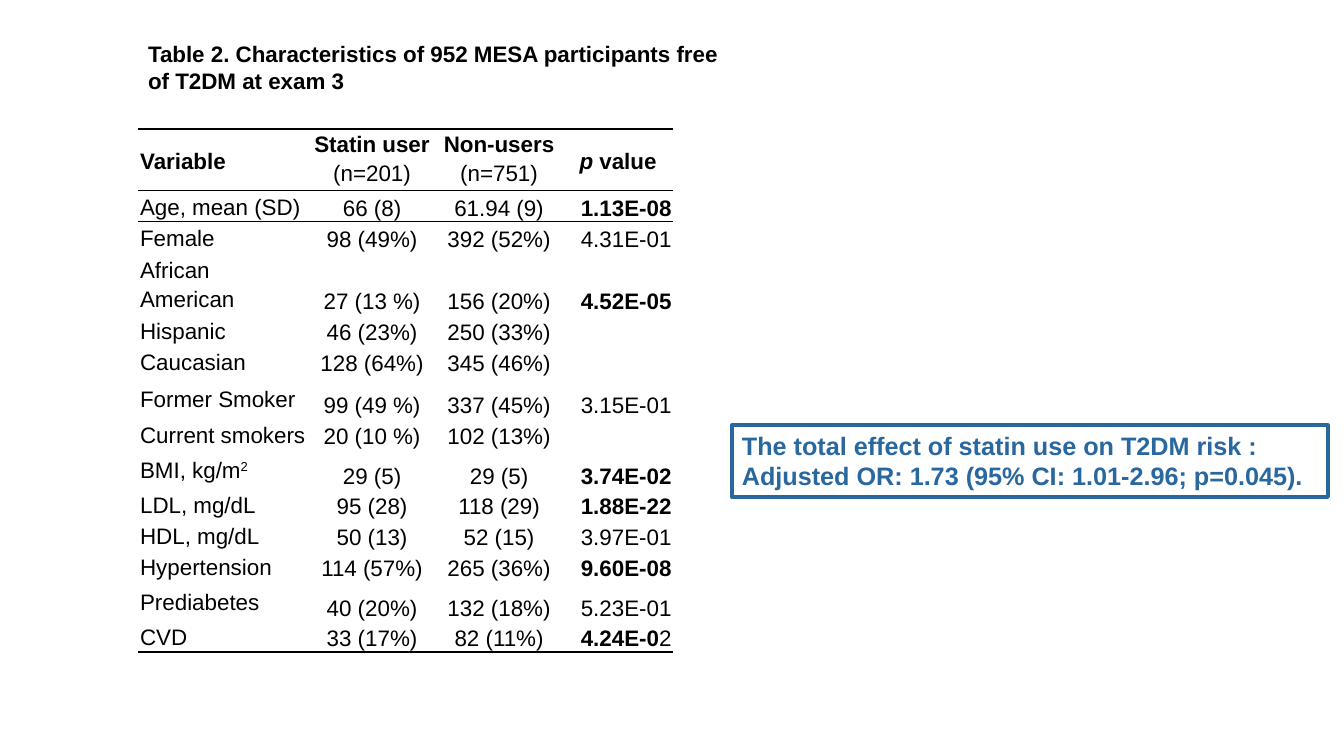
import pptx
import pptx.dml.color
import pptx.enum.shapes
import pptx.enum.text
import pptx.oxml.ns
import pptx.oxml.xmlchemy
import pptx.util

Inches = pptx.util.Inches
ALIGN = pptx.enum.text.PP_ALIGN
ANCHOR = pptx.enum.text.MSO_ANCHOR
COLORS = {"ink": "000000", "accent": "29679F"}
COLUMN_WIDTHS = [1.69, 1.26, 1.26, 1.1]
COLUMN_ALIGN = [ALIGN.LEFT, ALIGN.CENTER, ALIGN.CENTER, ALIGN.RIGHT]
PLAIN_STYLE = "{2D5ABB26-0587-4C30-8999-92F81FD0307C}"

HEADER = [
    [[("Variable", "b")]],
    [[("Statin user", "b")], [("(n=201)", "")]],
    [[("Non-users", "b")], [("(n=751)", "")]],
    [[("p ", "bi"), ("value", "b")]],
]
CHARACTERISTICS = [
    (0.3, "Age, mean (SD)", "66 (8)", "61.94 (9)", [("1.13E-08", "b")]),
    (0.3, "Female", "98 (49%)", "392 (52%)", "4.31E-01"),
    (0.6, "African American", "27 (13 %)", "156 (20%)", [("4.52E-05", "b")]),
    (0.3, "Hispanic", "46 (23%)", "250 (33%)", ""),
    (0.3, "Caucasian", "128 (64%)", "345 (46%)", ""),
    (0.42, "Former Smoker", "99 (49 %)", "337 (45%)", "3.15E-01"),
    (0.3, "Current smokers", "20 (10 %)", "102 (13%)", ""),
    (0.39, [("BMI, kg/m", ""), ("2", "^")], "29 (5)", "29 (5)", [("3.74E-02", "b")]),
    (0.3, "LDL, mg/dL", "95 (28)", "118 (29)", [("1.88E-22", "b")]),
    (0.3, "HDL, mg/dL", "50 (13)", "52 (15)", "3.97E-01"),
    (0.3, "Hypertension", "114 (57%)", "265 (36%)", [("9.60E-08", "b")]),
    (0.39, "Prediabetes", "40 (20%)", "132 (18%)", "5.23E-01"),
    (0.29, "CVD", "33 (17%)", "82 (11%)", [("4.24E-0", "b"), ("2", "")]),
]


class SlideBuilder:
    """Draws styled elements on the current slide."""

    font = "Arial"

    def __init__(self, slide):
        self.slide = slide

    def add_text(self, frame, paragraphs, size, color, align=ALIGN.LEFT, spacing=None):
        for index, parts in enumerate(paragraphs):
            paragraph = frame.paragraphs[0] if index == 0 else frame.add_paragraph()
            paragraph.alignment = align
            paragraph.line_spacing = spacing
            for text, marks in parts:
                if not text:
                    end = pptx.oxml.xmlchemy.OxmlElement("a:endParaRPr")
                    end.set("sz", str(size * 100))
                    paragraph._p.append(end)
                    continue
                run = paragraph.add_run()
                run.text = text
                run.font.name = self.font
                run.font.size = pptx.util.Pt(size)
                run.font.bold = "b" in marks
                run.font.italic = "i" in marks
                run.font.color.rgb = pptx.dml.color.RGBColor.from_string(COLORS[color])
                if "^" in marks:
                    run.font._element.set("baseline", "30000")

    def title(self, box, text):
        frame = self.slide.shapes.add_textbox(*map(Inches, box)).text_frame
        frame.word_wrap = True
        self.add_text(frame, [[(text, "b")]], 16, "ink")

    def callout(self, box, lines):
        callout = self.slide.shapes.add_shape(
            pptx.enum.shapes.MSO_SHAPE.RECTANGLE, *map(Inches, box))
        callout.shadow.inherit = False
        callout.fill.background()
        callout.line.color.rgb = pptx.dml.color.RGBColor.from_string(COLORS["accent"])
        callout.line.width = pptx.util.Pt(3)
        callout.text_frame.word_wrap = True
        callout.text_frame.vertical_anchor = ANCHOR.TOP
        self.add_text(callout.text_frame, [[(line, "b")] for line in lines], 18, "accent")

    def border(self, cell, side, width):
        line = pptx.oxml.xmlchemy.OxmlElement("a:ln" + side)
        line.set("w", str(pptx.util.Pt(width)))
        fill = pptx.oxml.xmlchemy.OxmlElement("a:solidFill")
        color = pptx.oxml.xmlchemy.OxmlElement("a:srgbClr")
        color.set("val", COLORS["ink"])
        fill.append(color)
        line.append(fill)
        cell._tc.get_or_add_tcPr().append(line)

    def cell(self, cell, paragraphs, align, anchor, borders):
        cell.margin_left = cell.margin_right = Inches(0.02)
        cell.margin_top = cell.margin_bottom = 0
        cell.vertical_anchor = anchor
        for side, width in borders:
            self.border(cell, side, width)
        cell.fill.background()
        self.add_text(cell.text_frame, paragraphs, 16, "ink", align, 1.15)

    def table(self, box, header, rows):
        frame = self.slide.shapes.add_table(
            len(rows) + 1, len(COLUMN_WIDTHS), *map(Inches, box))
        table = frame.table
        table.first_row = table.horz_banding = False
        for style in frame.element.iter(pptx.oxml.ns.qn("a:tableStyleId")):
            style.text = PLAIN_STYLE
        for column, width in zip(table.columns, COLUMN_WIDTHS):
            column.width = Inches(width)
        table.rows[0].height = Inches(0.58)
        for index, paragraphs in enumerate(header):
            align = ALIGN.LEFT if index == 0 else ALIGN.CENTER
            anchor = ANCHOR.TOP if len(paragraphs) > 1 else ANCHOR.MIDDLE
            self.cell(table.cell(0, index), paragraphs, align, anchor, [("T", 1.5), ("B", 1)])
        for number, (height, *values) in enumerate(rows, 1):
            table.rows[number].height = Inches(height)
            borders = {1: [("T", 1)], len(rows): [("B", 1.5)]}.get(number, [])
            for index, value in enumerate(values):
                parts = [(value, "")] if isinstance(value, str) else value
                anchor = ANCHOR.MIDDLE if index == 0 else ANCHOR.BOTTOM
                self.cell(table.cell(number, index), [parts], COLUMN_ALIGN[index], anchor, borders)


def main():
    presentation = pptx.Presentation()
    presentation.slide_width = Inches(13.33)
    presentation.slide_height = Inches(7.5)
    builder = SlideBuilder(presentation.slides.add_slide(presentation.slide_layouts[6]))
    builder.title((1.37, 0.35, 6.03, 0.64),
                  "Table 2. Characteristics of 952 MESA participants free of T2DM at exam 3")
    builder.table((1.37, 1.28, 5.31, 5.19), HEADER, CHARACTERISTICS)
    builder.callout((7.26, 4.22, 5.91, 0.71),
                    ["The total effect of statin use on T2DM risk :",
                     "Adjusted OR: 1.73 (95% CI: 1.01-2.96; p=0.045)."])
    presentation.save("out.pptx")


if __name__ == "__main__":
    main()
